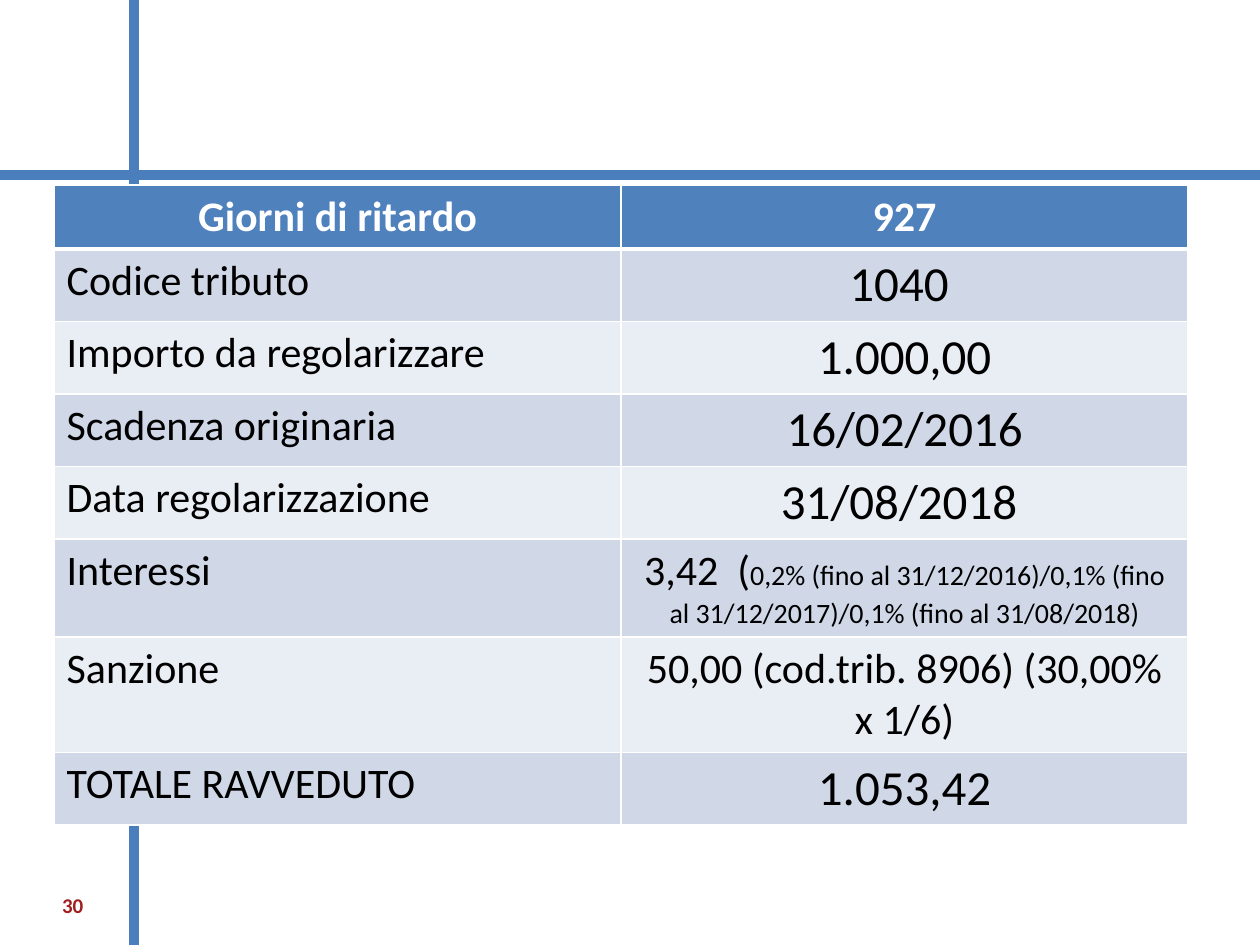
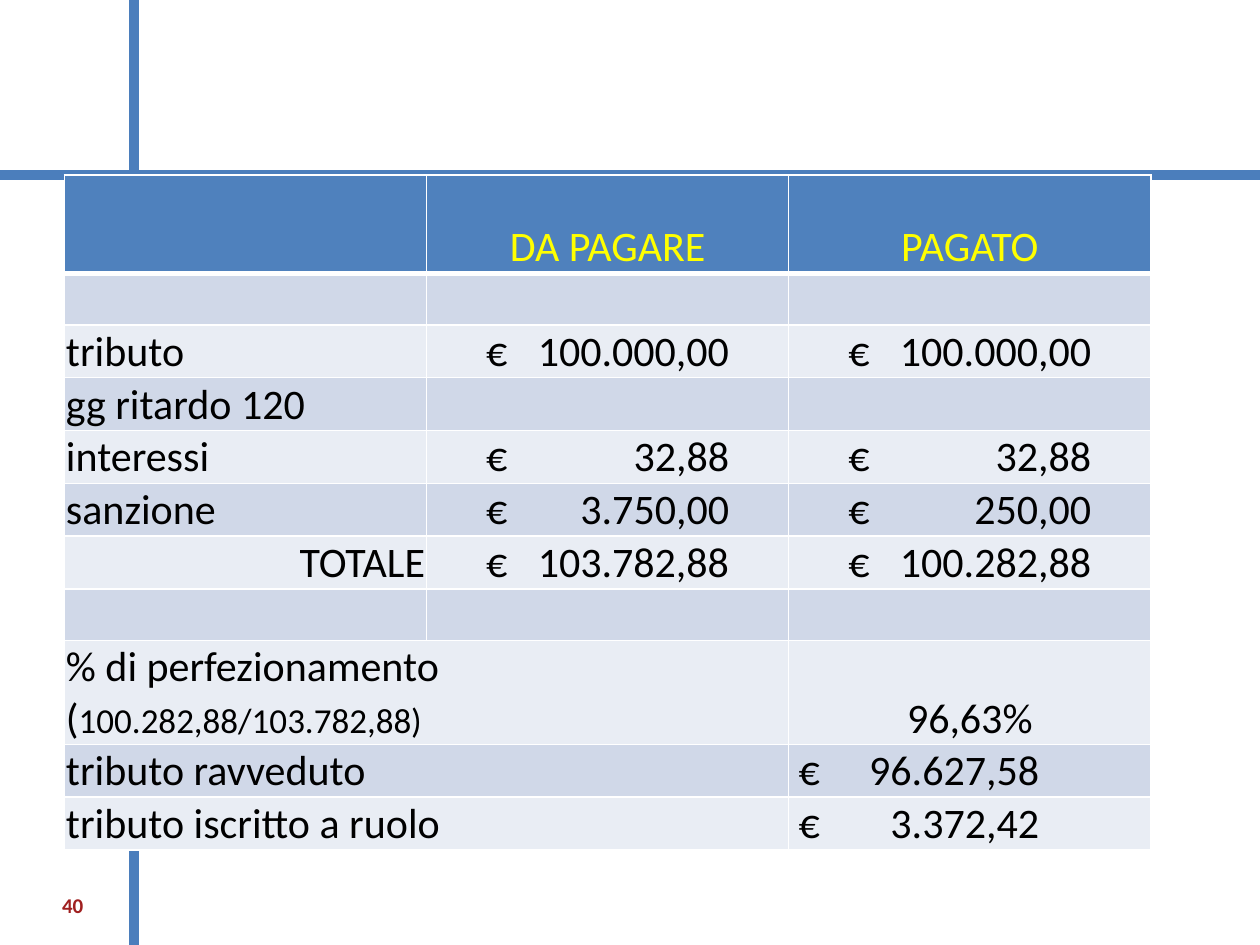
from lxml.etree import SubElement
from pptx import Presentation
from pptx.dml.color import RGBColor
from pptx.enum.shapes import MSO_CONNECTOR
from pptx.enum.text import MSO_ANCHOR, PP_ALIGN
from pptx.oxml.ns import qn
from pptx.util import Cm, Pt

FONT = "Calibri"
LINE_BLUE, HEADER_BLUE = "4B7EBC", "4F81BD"
BANDS = ("E9EDF4", "D0D8E8")  # even rows, odd rows
WHITE, BLACK, YELLOW, RED = "FFFFFF", "000000", "FFFF00", "A02020"
LEFT, CENTER, RIGHT = PP_ALIGN.LEFT, PP_ALIGN.CENTER, PP_ALIGN.RIGHT
ROW_H = 1.04

DELAY_ROWS = [
    ("Giorni di ritardo", [("927", 24)]),
    ("Codice tributo", [("1040 ", 28)]),
    ("Importo da regolarizzare", [("1.000,00", 28)]),
    ("Scadenza originaria", [("16/02/2016", 28)]),
    ("Data regolarizzazione", [("31/08/2018 ", 28)]),
    ("Interessi", [("3,42  (", 24),
                   ("0,2% (fino al 31/12/2016)/0,1% (fino al 31/12/2017)"
                    "/0,1% (fino al 31/08/2018)", 16)]),
    ("Sanzione", [("50,00 (cod.trib. 8906) (30,00% x 1/6)", 24)]),
    ("TOTALE RAVVEDUTO", [("1.053,42", 28)]),
]
PAYMENT_ROWS = [
    ("", "DA PAGARE", "PAGATO"),
    ("", "", ""),
    ("tributo", "€\t100.000,00", "€\t100.000,00"),
    ("gg ritardo 120", "", ""),
    ("interessi", "€\t32,88", "€\t32,88"),
    ("sanzione", "€\t3.750,00", "€\t250,00"),
    ("TOTALE", "€\t103.782,88", "€\t100.282,88"),
    ("", "", ""),
    ([("% di perfezionamento (", 24), ("100.282,88/103.782,88)", 20)],
     None, "96,63%"),
    ("tributo ravveduto", None, "€\t96.627,58"),
    ("tributo iscritto a ruolo", None, "€\t3.372,42"),
]


def color(value):
    return RGBColor.from_string(value)


def set_all(obj, values):
    for name, value in values.items():
        setattr(obj, name, value)


def write(p, runs, hue, align=LEFT, bold=False):
    """Fill a paragraph with (text, size) runs."""
    p.alignment = align
    for text, size in runs:
        r = p.add_run()
        r.text = text
        set_all(r.font, {"name": FONT, "size": Pt(size), "bold": bold})
        r.font.color.rgb = color(hue)


def add_right_tab(p, pos):
    tabs = SubElement(p._p.get_or_add_pPr(), qn("a:tabLst"))
    SubElement(tabs, qn("a:tab"), pos=str(int(pos)), algn="r")


def set_borders(cell, top, bottom):
    tcPr = cell._tc.get_or_add_tcPr()
    widths = {"a:lnL": 1, "a:lnR": 1, "a:lnT": top, "a:lnB": bottom}
    for i, (tag, width) in enumerate(widths.items()):
        ln = SubElement(tcPr, qn(tag), w=str(Pt(width)))
        SubElement(SubElement(ln, qn("a:solidFill")), qn("a:srgbClr"), val=WHITE)
        tcPr.insert(i, ln)


def add_banded_table(s, x, y, col_w, n_cols, heights):
    """Table with a blue header, two band colours and white rules."""
    frame = s.shapes.add_table(len(heights), n_cols, Cm(x), Cm(y),
                               Cm(col_w * n_cols), Cm(sum(heights)))
    table = frame.table
    for col in table.columns:
        col.width = Cm(col_w)
    for i, height in enumerate(heights):
        table.rows[i].height = Cm(height)
        for cell in table.rows[i].cells:
            cell.fill.solid()
            cell.fill.fore_color.rgb = color(BANDS[i % 2] if i else HEADER_BLUE)
            set_borders(cell, 3 if i == 1 else 1, 3 if i == 0 else 1)
    return table


def delay_table(s, x, y):
    table = add_banded_table(s, x, y, 11.43, 2, [ROW_H] * len(DELAY_ROWS))
    for i, (label, value) in enumerate(DELAY_ROWS):
        hue, header = (BLACK, False) if i else (WHITE, True)
        write(table.cell(i, 0).text_frame.paragraphs[0], [(label, 24)], hue,
              CENTER if header else LEFT, header)
        write(table.cell(i, 1).text_frame.paragraphs[0], value, hue, CENTER, header)


def payment_table(s, x, y):
    heights = [1.98] + [ROW_H] * (len(PAYMENT_ROWS) - 1)
    table = add_banded_table(s, x, y, 7.3, 3, heights)
    for i, row in enumerate(PAYMENT_ROWS):
        merged = row[1] is None
        if merged:
            table.cell(i, 0).merge(table.cell(i, 1))
        for j, content in enumerate(row):
            if not content:
                continue
            cell = table.cell(i, j)
            set_all(cell, {"vertical_anchor": MSO_ANCHOR.BOTTOM,
                           "margin_left": Cm(0.03), "margin_right": Cm(0.03),
                           "margin_top": Cm(0.03), "margin_bottom": 0})
            p = cell.text_frame.paragraphs[0]
            align = CENTER if j else RIGHT if content == "TOTALE" else LEFT
            if "\t" in content:  # euro sign on the left, amount on a right tab
                indent, end = (0.2, 5.05) if merged else (1.2, 6.1)
                cell.margin_left = Cm(indent)
                add_right_tab(p, Cm(end - indent))
                align = LEFT
            runs = [(content, 24)] if isinstance(content, str) else content
            write(p, runs, BLACK if i else YELLOW, align)


def page_number(s, number):
    box = s.shapes.add_textbox(Cm(0.89), Cm(17.73), Cm(1.04), Cm(1.02))
    tf = box.text_frame
    set_all(tf, {"word_wrap": True, "vertical_anchor": MSO_ANCHOR.MIDDLE})
    write(tf.paragraphs[0], [(number, 12)], RED, RIGHT, True)


def crossing_lines(s, layout, width, height):
    """Draw the two crossing lines and hand them to the shared layout."""
    for ends in ((Cm(2.7), 0, Cm(2.7), height), (0, Cm(3.53), width, Cm(3.53))):
        line = s.shapes.add_connector(MSO_CONNECTOR.STRAIGHT, *ends)
        line.line.color.rgb = color(LINE_BLUE)
        line.line.width = Pt(6)
        SubElement(line.element.spPr, qn("a:effectLst"))
        layout.shapes.element.append(line.element)


def main():
    prs = Presentation()
    set_all(prs, {"slide_width": Cm(25.4), "slide_height": Cm(19.05)})
    layout = prs.slide_layouts[6]

    # Late payment of a single tax
    s = prs.slides.add_slide(layout)
    crossing_lines(s, layout, prs.slide_width, prs.slide_height)
    delay_table(s, 1.09, 3.73)
    page_number(s, "30")

    # Amounts due and paid
    s = prs.slides.add_slide(layout)
    payment_table(s, 1.3, 3.53)
    page_number(s, "40")

    prs.save("out.pptx")


if __name__ == "__main__":
    main()
